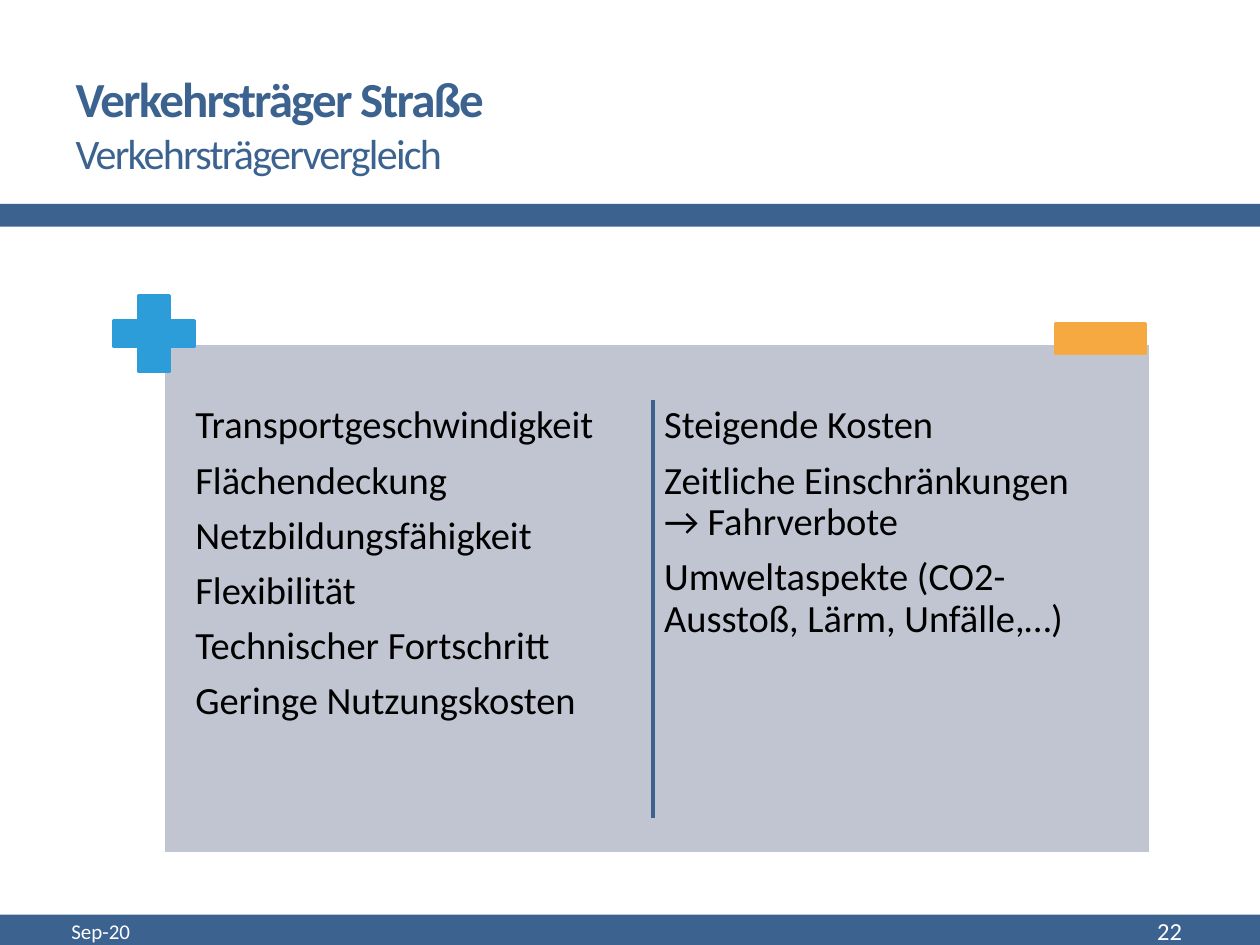
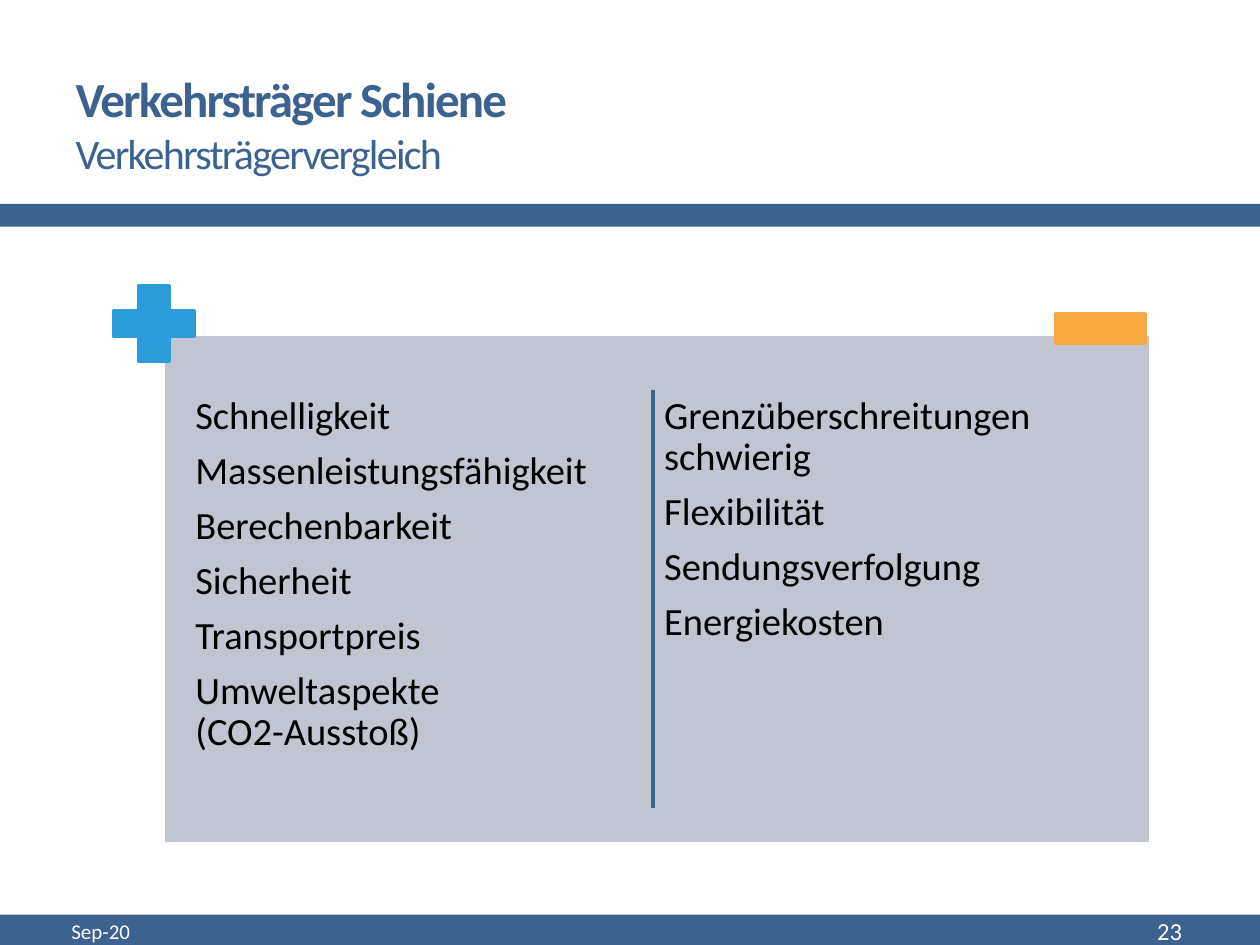
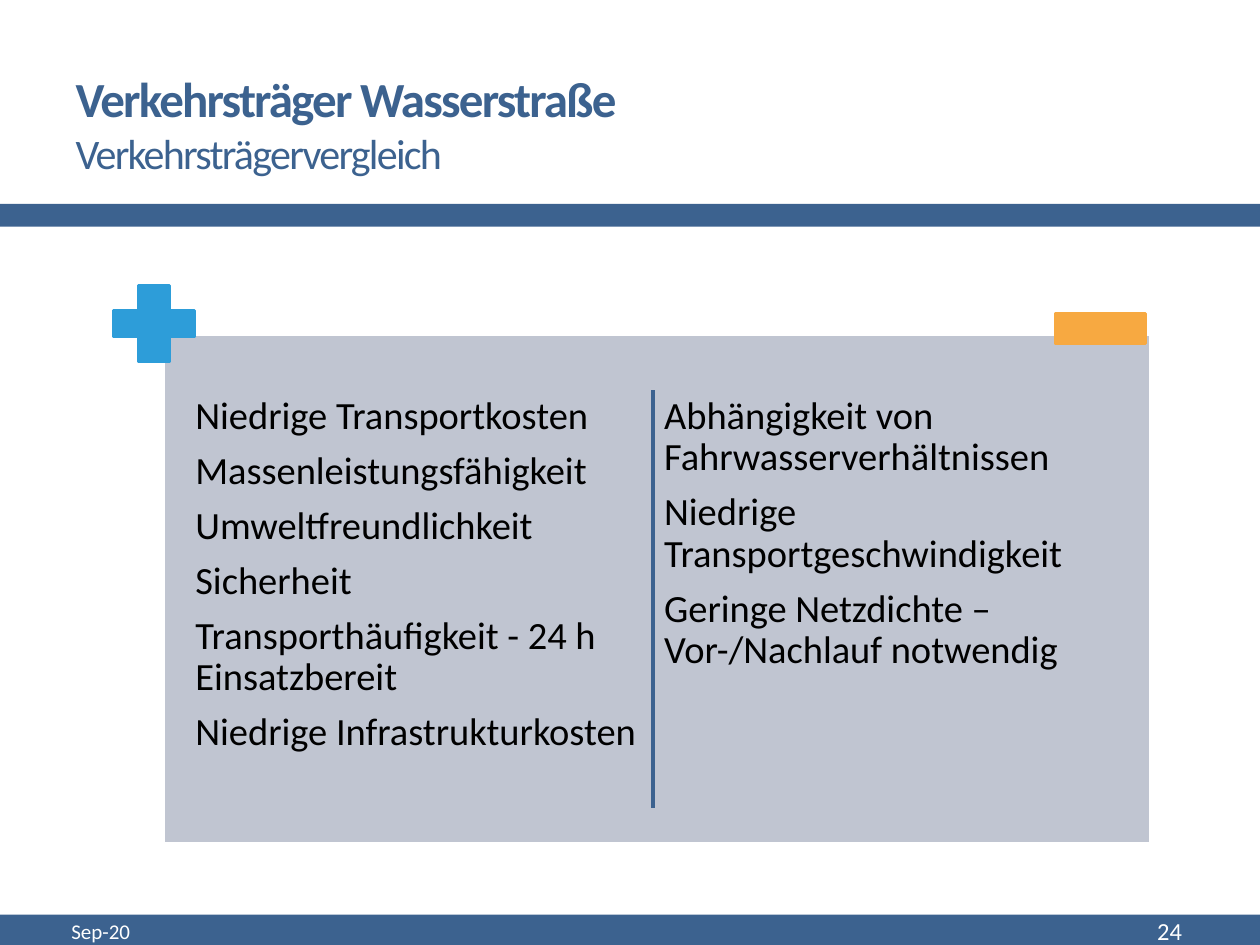
from lxml import etree
from pptx import Presentation
from pptx import util as u
from pptx.dml import color
from pptx.enum import shapes, text
from pptx.oxml import ns

BLUE, GREY, WHITE, BLACK = "3C628F", "C0C5D1", "FFFFFF", "000000"
SKY, AMBER = "2D9DD9", "F7A941"
FONT = "Calibri"
KIND = shapes.MSO_SHAPE
WIDTH, HEIGHT = 25.4, 19.05
DATE = "Sep-20"
FIRST = 22
SUB = "Verkehrsträgervergleich"

TOPICS = [
    ("Straße", 6.93,
     ["Transportgeschwindigkeit", "Flächendeckung", "Netzbildungsfähigkeit",
      "Flexibilität", "Technischer Fortschritt", "Geringe Nutzungskosten"],
     ["Steigende Kosten", "Zeitliche Einschränkungen → Fahrverbote",
      "Umweltaspekte (CO2-Ausstoß, Lärm, Unfälle,…)"]),
    ("Schiene", 6.73,
     ["Schnelligkeit", "Massenleistungsfähigkeit", "Berechenbarkeit",
      "Sicherheit", "Transportpreis", "Umweltaspekte \n(CO2-Ausstoß)"],
     ["Grenzüberschreitungen schwierig", "Flexibilität",
      "Sendungsverfolgung", "Energiekosten"]),
    ("Wasserstraße", 6.73,
     ["Niedrige Transportkosten", "Massenleistungsfähigkeit",
      "Umweltfreundlichkeit", "Sicherheit",
      "Transporthäufigkeit - 24 h Einsatzbereit",
      "Niedrige Infrastrukturkosten"],
     ["Abhängigkeit von Fahrwasserverhältnissen",
      "Niedrige Transportgeschwindigkeit",
      "Geringe Netzdichte – Vor-/Nachlauf notwendig"]),
]


def rgb(code):
    return color.RGBColor.from_string(code)


def cm(*sizes):
    return [u.Cm(size) for size in sizes]


class Deck:
    def __init__(self):
        self.prs = Presentation()
        self.prs.slide_width, self.prs.slide_height = cm(WIDTH, HEIGHT)
        self.slide = None

    def start(self, head, sub, page):
        self.slide = self.prs.slides.add_slide(self.prs.slide_layouts[5])
        self.shape(KIND.RECTANGLE, (0, 18.44, WIDTH, 0.61), BLUE)
        self.shape(KIND.RECTANGLE, (0, 4.11, WIDTH, 0.46), BLUE)
        self.title(head, sub)
        self.foot(DATE, (1.19, 18.31, 8.05, 0.91), 12, text.PP_ALIGN.LEFT)
        self.foot(str(page), (21.11, 18.31, 2.97, 0.91), 14,
                  text.PP_ALIGN.RIGHT)

    def run(self, para, words, size, tint, bold=False, track=None):
        for i, part in enumerate(words.split("\n")):
            if i:
                para.add_line_break()
            run = para.add_run()
            run.text = part
            run.font.name = FONT
            run.font.size = u.Pt(size)
            run.font.bold = bold
            run.font.color.rgb = rgb(tint)
            if track:
                run.font._element.set("spc", str(track))

    def title(self, head, sub):
        box = self.slide.shapes.title
        box.left, box.top, box.width, box.height = cm(1.27, 1.12, 22.86, 2.74)
        frame = box.text_frame
        frame.auto_size = text.MSO_AUTO_SIZE.NONE
        frame.vertical_anchor = text.MSO_ANCHOR.MIDDLE
        para = frame.paragraphs[0]
        para.alignment = text.PP_ALIGN.LEFT
        self.run(para, head, 28, BLUE, True, -100)
        para.add_line_break()
        self.run(para, sub, 24, BLUE, False, -100)

    def shape(self, kind, area, fill, line=None):
        item = self.slide.shapes.add_shape(kind, *cm(*area))
        item.shadow.inherit = False
        item.fill.solid()
        item.fill.fore_color.rgb = rgb(fill)
        if line:
            item.line.color.rgb = rgb(line)
            item.line.width = u.Pt(2)
        else:
            item.line.fill.background()
        return item

    def frame(self, area):
        frame = self.slide.shapes.add_textbox(*cm(*area)).text_frame
        frame.word_wrap = True
        return frame

    def foot(self, words, area, size, align):
        frame = self.frame(area)
        frame.vertical_anchor = text.MSO_ANCHOR.MIDDLE
        para = frame.paragraphs[0]
        para.alignment = align
        self.run(para, words, size, WHITE)

    def points(self, area, lines):
        frame = self.frame(area)
        frame.margin_left = frame.margin_right = u.Cm(0.13)
        frame.margin_top = frame.margin_bottom = u.Cm(0.13)
        for i, words in enumerate(lines):
            para = frame.add_paragraph() if i else frame.paragraphs[0]
            para.line_spacing = 0.9
            para.space_after = u.Pt(7.7)
            self.run(para, words, 22, BLACK)

    def rule(self, x, top, end):
        line = self.slide.shapes.add_connector(
            shapes.MSO_CONNECTOR.STRAIGHT, *cm(x, top, x, end))
        line.line.color.rgb = rgb(BLUE)
        line.line.width = u.Pt(2)
        etree.SubElement(line._element.spPr, ns.qn("a:effectLst"))

    def panel(self, top, pros, cons):
        self.shape(KIND.RECTANGLE, (3.3, top, 19.89, 10.29), GREY, WHITE)
        for left, lines in ((3.81, pros), (13.26, cons)):
            self.points((left, top + 1.12, 9.25, 8.79), lines)
        plus = self.shape(KIND.CROSS, (2.29, top - 0.97, 1.63, 1.52), SKY, SKY)
        plus.adjustments[0] = 0.33
        self.shape(KIND.RECTANGLE, (21.29, top - 0.41, 1.8, 0.61),
                   AMBER, AMBER)
        self.rule(13.16, top + 1.14, top + 9.55)


def main():
    deck = Deck()
    for page, (mode, top, pros, cons) in enumerate(TOPICS, FIRST):
        deck.start(f"Verkehrsträger {mode}", SUB, page)
        deck.panel(top, pros, cons)
    deck.prs.save("out.pptx")


if __name__ == "__main__":
    main()
